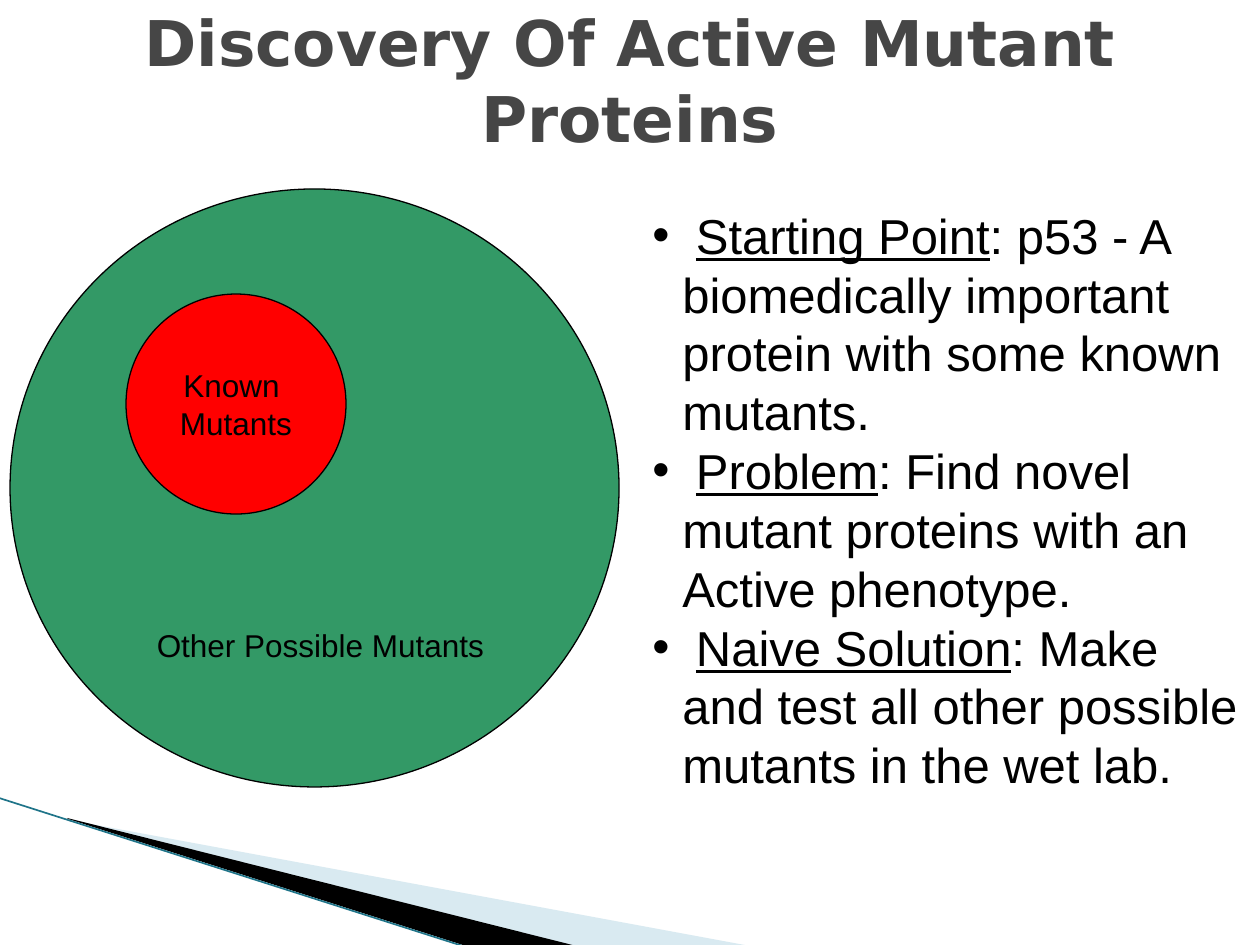
from dataclasses import dataclass

import lxml.etree
import pptx
import pptx.dml.color
import pptx.enum.shapes
import pptx.enum.text
import pptx.oxml.ns
import pptx.util

EMU_PER_PX = 914400 / 126
ALIGN = pptx.enum.text.PP_ALIGN
ANCHOR = pptx.enum.text.MSO_ANCHOR


@dataclass(frozen=True)
class Theme:
    ink: str = "000000"
    title_ink: str = "464646"
    possible: str = "339966"
    known: str = "FF0000"
    pale_wedge: str = "A0CBDC"
    edge: str = "1F7489"
    title_font: str = "DejaVu Sans"
    body_font: str = "Arial"
    title_size: int = 36
    body_size: int = 28
    label_size: int = 18
    outline: float = 0.75
    edge_width: float = 0.95


@dataclass(frozen=True)
class Area:
    left: int
    top: int
    width: int
    height: int

    def emu(self) -> list:
        return [px(n) for n in (self.left, self.top, self.width, self.height)]


@dataclass(frozen=True)
class Wedge:
    points: tuple
    fill: str
    opacity: int = 100


@dataclass(frozen=True)
class Circle:
    area: Area
    fill: str
    label: str = ""


@dataclass(frozen=True)
class Point:
    heading: str
    detail: str


THEME = Theme()
WEDGES = (
    Wedge(((69, 820), (750, 946), (575, 946), (69, 819)), THEME.pale_wedge, 40),
    Wedge(((67, 818), (576, 946), (469, 947), (68, 819)), THEME.ink),
)
CIRCLES = (
    Circle(Area(10, 189, 609, 598), THEME.possible),
    Circle(Area(126, 294, 220, 220), THEME.known, "Known \vMutants"),
)
POINTS = (
    Point("Starting Point",
          ": p53 - A biomedically important protein with some known mutants."),
    Point("Problem", ": Find novel mutant proteins with an Active phenotype."),
    Point("Naive Solution",
          ": Make and test all other possible mutants in the wet lab."),
)
BULLET_INDENT = 30


def px(length: float) -> pptx.util.Emu:
    return pptx.util.Emu(round(length * EMU_PER_PX))


def rgb(color: str) -> pptx.dml.color.RGBColor:
    return pptx.dml.color.RGBColor.from_string(color)


def add_element(parent, tag: str, **attributes: str):
    return lxml.etree.SubElement(parent, pptx.oxml.ns.qn(tag), attributes)


def style(span, size: int, color: str = THEME.ink,
          font: str = THEME.body_font, bold: bool = False) -> None:
    span.font.size = pptx.util.Pt(size)
    span.font.name = font
    span.font.bold = bold
    span.font.color.rgb = rgb(color)


def write_centred(frame, text: str, size: int, **look) -> None:
    frame.text = text
    para = frame.paragraphs[0]
    para.alignment = ALIGN.CENTER
    for span in para.runs:
        style(span, size, **look)


def draw_wedge(page, wedge: Wedge) -> None:
    builder = page.shapes.build_freeform(*wedge.points[0], scale=EMU_PER_PX)
    builder.add_line_segments(wedge.points[1:], close=True)
    shape = builder.convert_to_shape()
    shape.shadow.inherit = False
    shape.line.fill.background()
    shape.fill.solid()
    shape.fill.fore_color.rgb = rgb(wedge.fill)
    if wedge.opacity < 100:
        color = shape.fill._xPr.find(".//" + pptx.oxml.ns.qn("a:srgbClr"))
        add_element(color, "a:alpha", val=str(wedge.opacity * 1000))


def draw_edge(page) -> None:
    edge = page.shapes.add_connector(
        pptx.enum.shapes.MSO_CONNECTOR.STRAIGHT,
        px(-1), px(798), px(469), px(948))
    edge.line.color.rgb = rgb(THEME.edge)
    edge.line.width = pptx.util.Pt(THEME.edge_width)
    add_element(edge._element.spPr, "a:effectLst")


def draw_circle(page, circle: Circle) -> None:
    shape = page.shapes.add_shape(
        pptx.enum.shapes.MSO_SHAPE.OVAL, *circle.area.emu())
    shape.shadow.inherit = False
    shape.fill.solid()
    shape.fill.fore_color.rgb = rgb(circle.fill)
    shape.line.color.rgb = rgb(THEME.ink)
    shape.line.width = pptx.util.Pt(THEME.outline)
    if circle.label:
        shape.text_frame.word_wrap = False
        shape.text_frame.vertical_anchor = ANCHOR.MIDDLE
        write_centred(shape.text_frame, circle.label, THEME.label_size)


def add_frame(page, area: Area, anchor=ANCHOR.TOP):
    frame = page.shapes.add_textbox(*area.emu()).text_frame
    frame.word_wrap = True
    frame.vertical_anchor = anchor
    return frame


def write_point(para, point: Point) -> None:
    properties = para._p.get_or_add_pPr()
    properties.set("marL", str(px(BULLET_INDENT)))
    properties.set("indent", str(-px(BULLET_INDENT)))
    add_element(properties, "a:buFont", typeface=THEME.body_font)
    add_element(properties, "a:buChar", char="•")
    for text in (" ", point.heading, point.detail):
        span = para.add_run()
        span.text = text
        style(span, THEME.body_size)
        span.font.underline = text == point.heading


def main() -> None:
    deck = pptx.Presentation()
    deck.slide_width, deck.slide_height = px(1260), px(945)
    page = deck.slides.add_slide(deck.slide_layouts[6])

    for wedge in WEDGES:
        draw_wedge(page, wedge)
    draw_edge(page)

    title = add_frame(page, Area(63, 0, 1134, 158), ANCHOR.MIDDLE)
    write_centred(title, "Discovery Of Active Mutant Proteins",
                  THEME.title_size, color=THEME.title_ink,
                  font=THEME.title_font, bold=True)

    for circle in CIRCLES:
        draw_circle(page, circle)
    other = add_frame(page, Area(105, 620, 431, 88))
    write_centred(other, "Other Possible Mutants", THEME.label_size)

    body = add_frame(page, Area(640, 199, 620, 665))
    for index, point in enumerate(POINTS):
        para = body.add_paragraph() if index else body.paragraphs[0]
        write_point(para, point)

    deck.save("out.pptx")


if __name__ == "__main__":
    main()
